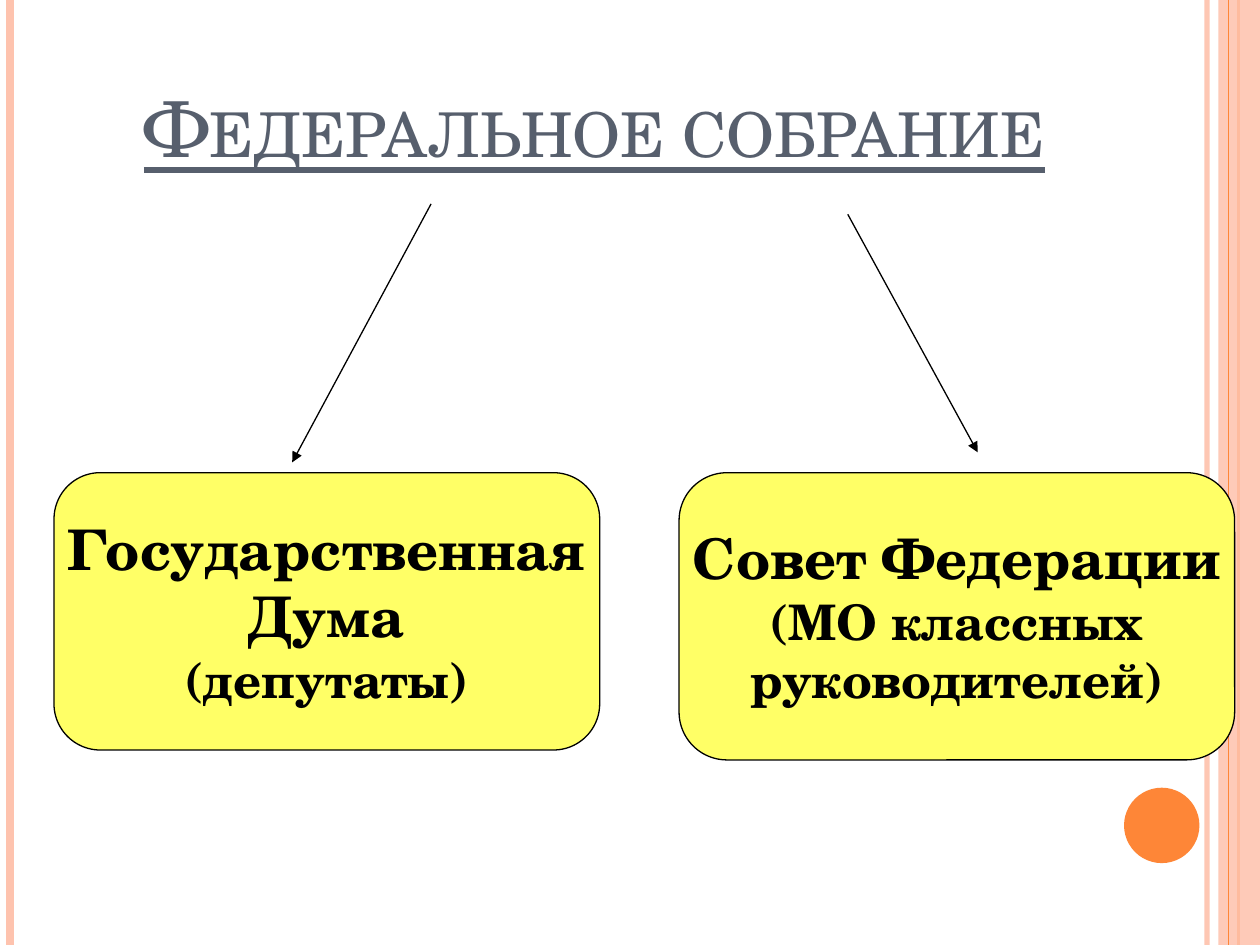
from dataclasses import dataclass

from lxml import etree
from pptx import Presentation
from pptx.dml.color import RGBColor
from pptx.enum.shapes import MSO_CONNECTOR, MSO_SHAPE
from pptx.enum.text import MSO_ANCHOR, PP_ALIGN
from pptx.oxml.ns import qn
from pptx.util import Cm, Pt

STRAIGHT = MSO_CONNECTOR.STRAIGHT
RECTANGLE = MSO_SHAPE.RECTANGLE
ROUNDED = MSO_SHAPE.ROUNDED_RECTANGLE
OVAL = MSO_SHAPE.OVAL
CENTER = PP_ALIGN.CENTER
MIDDLE = MSO_ANCHOR.MIDDLE
BOTTOM = MSO_ANCHOR.BOTTOM

FONT = "TeX Gyre Schola"
BLACK, YELLOW, ORANGE, PEACH, SLATE = "000000", "FFFF66", "FE8637", "FEC3AE", "575F6D"
WIDTH, HEIGHT = 25.4, 19.05


@dataclass
class Stripe:
    x: float
    color: str
    weight: float
    opacity: int = 100


@dataclass
class Arrow:
    start: tuple[float, float]
    end: tuple[float, float]


@dataclass
class Chamber:
    left: float
    width: float
    height: float
    lines: list[tuple[str, int]]


STRIPES = [
    Stripe(24.33, PEACH, 3, 93),
    Stripe(0.2, PEACH, 4.5),
    Stripe(24.97, ORANGE, 1.5),
]
EDGE_STRIPE = Stripe(24.77, ORANGE, 0.75)
ARROWS = [
    Arrow((8.69, 4.11), (5.89, 9.32)),
    Arrow((17.09, 4.32), (19.71, 9.12)),
]
CHAMBER_TOP = 9.53
CHAMBERS = [
    Chamber(1.09, 11, 5.59, [("Государственная", 32), ("Дума", 32), ("(депутаты)", 28)]),
    Chamber(13.69, 11.2, 5.79,
            [("Совет Федерации", 32), ("(МО классных", 28), ("руководителей)", 28)]),
]


def set_color(color_format, value: str, opacity: int = 100) -> None:
    color_format.rgb = RGBColor.from_string(value)
    if opacity < 100:
        color = color_format._xFill.find(qn("a:srgbClr"))
        etree.SubElement(color, qn("a:alpha")).set("val", str(opacity * 1000))


def add_line(slide, start: tuple, end: tuple, color: str, weight: float, opacity: int = 100):
    connector = slide.shapes.add_connector(STRAIGHT, *map(Cm, start + end))
    connector.line.width = Pt(weight)
    connector.line.fill.solid()
    connector.line.color.rgb = RGBColor.from_string(color)
    properties = connector._element.spPr
    if opacity < 100:
        color_element = next(properties.iter(qn("a:srgbClr")))
        etree.SubElement(color_element, qn("a:alpha")).set("val", str(opacity * 1000))
    etree.SubElement(properties, qn("a:effectLst"))
    return connector


def add_stripe(slide, stripe: Stripe) -> None:
    add_line(slide, (stripe.x, 0), (stripe.x, HEIGHT), stripe.color, stripe.weight, stripe.opacity)


def add_arrow(slide, arrow: Arrow) -> None:
    connector = add_line(slide, arrow.start, arrow.end, BLACK, 0.75)
    line = connector._element.spPr.find(qn("a:ln"))
    etree.SubElement(line, qn("a:tailEnd")).set("type", "triangle")


def add_filled_shape(slide, kind, left: float, top: float, width: float, height: float,
                     color: str, opacity: int = 100):
    shape = slide.shapes.add_shape(kind, Cm(left), Cm(top), Cm(width), Cm(height))
    shape.shadow.inherit = False
    shape.fill.solid()
    shape.fill.fore_color.rgb = RGBColor.from_string(color)
    if opacity < 100:
        color_element = next(shape._element.spPr.iter(qn("a:srgbClr")))
        etree.SubElement(color_element, qn("a:alpha")).set("val", str(opacity * 1000))
    shape.line.fill.background()
    return shape


def format_paragraph(paragraph, size: float, color: str, bold: bool) -> None:
    paragraph.alignment = CENTER
    paragraph.font.name = FONT
    paragraph.font.size = Pt(size)
    paragraph.font.bold = bold
    paragraph.font.color.rgb = RGBColor.from_string(color)


def add_chamber(slide, chamber: Chamber) -> None:
    shape = add_filled_shape(slide, ROUNDED, chamber.left, CHAMBER_TOP,
                             chamber.width, chamber.height, YELLOW)
    shape.line.fill.solid()
    shape.line.color.rgb = RGBColor.from_string(BLACK)
    shape.line.width = Pt(0.75)
    frame = shape.text_frame
    frame.word_wrap = False
    frame.vertical_anchor = MIDDLE
    for index, (text, size) in enumerate(chamber.lines):
        paragraph = frame.add_paragraph() if index else frame.paragraphs[0]
        paragraph.text = text
        format_paragraph(paragraph, size, BLACK, True)


def fill_title(title) -> None:
    title.left, title.top, title.width, title.height = Cm(1.5), Cm(0), Cm(20.96), Cm(3.61)
    frame = title.text_frame
    frame.text = "Федеральное собрание"
    frame.word_wrap = True
    frame.vertical_anchor = BOTTOM
    paragraph = frame.paragraphs[0]
    format_paragraph(paragraph, 44.1, SLATE, False)
    paragraph.font.underline = True
    paragraph._p.pPr.find(qn("a:defRPr")).set("cap", "small")


def main() -> None:
    presentation = Presentation()
    presentation.slide_width, presentation.slide_height = Cm(WIDTH), Cm(HEIGHT)
    slide = presentation.slides.add_slide(presentation.slide_layouts[5])
    for stripe in STRIPES:
        add_stripe(slide, stripe)
    add_filled_shape(slide, RECTANGLE, 24.56, 0, 0.84, HEIGHT, PEACH, 87)
    add_stripe(slide, EDGE_STRIPE)
    add_filled_shape(slide, OVAL, 22.66, 15.88, 1.52, 1.52, ORANGE)
    fill_title(slide.shapes.title)
    for arrow in ARROWS:
        add_arrow(slide, arrow)
    for chamber in CHAMBERS:
        add_chamber(slide, chamber)
    presentation.save("out.pptx")


if __name__ == "__main__":
    main()
